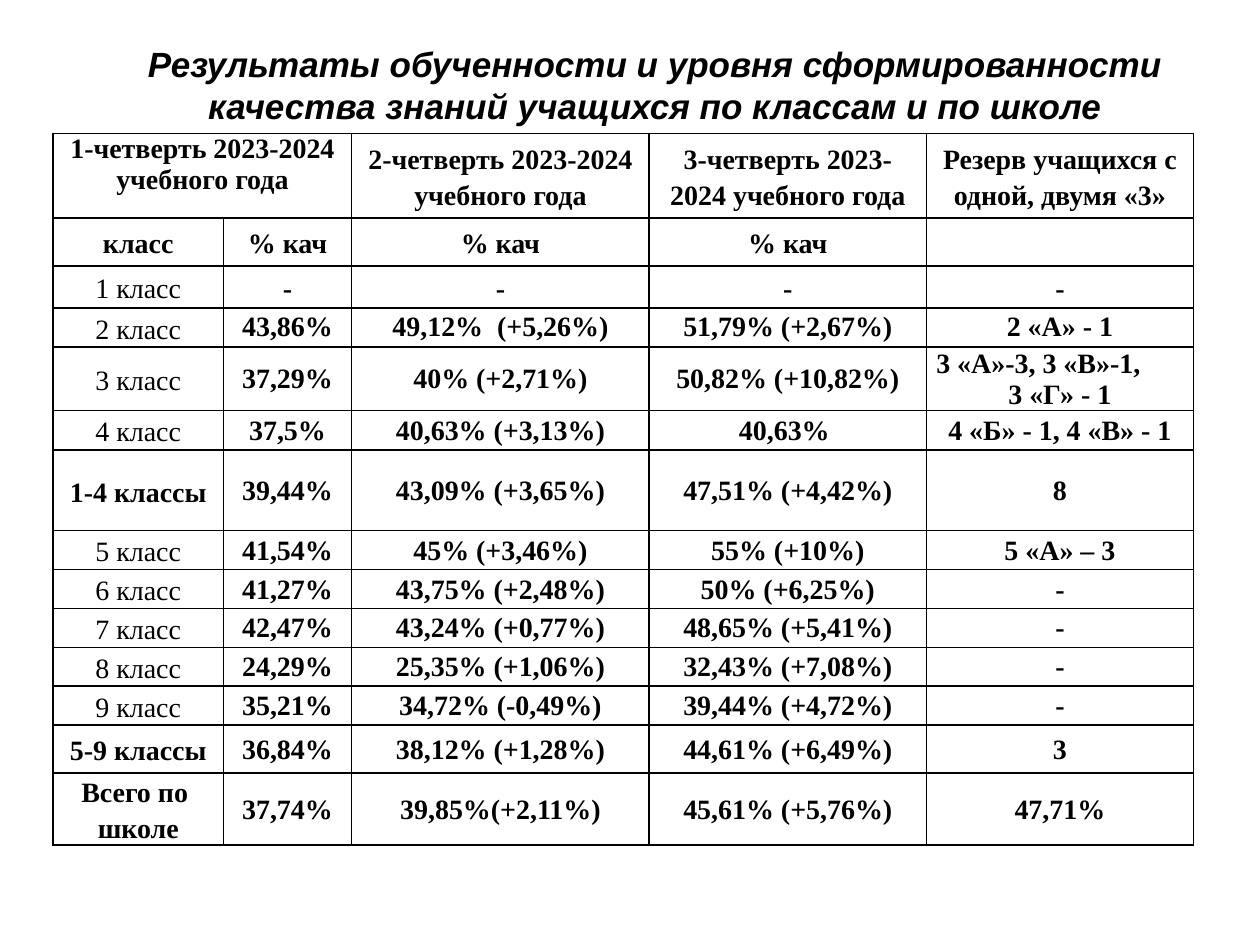
import pptx
import pptx.util
import pptx.dml.color
import pptx.enum.text
import pptx.oxml
import pptx.oxml.ns

Pt = pptx.util.Pt
ALIGN = pptx.enum.text.PP_ALIGN
ANCHOR = pptx.enum.text.MSO_ANCHOR
BLACK = pptx.dml.color.RGBColor(0, 0, 0)

TITLE = ("Результаты обученности и уровня сформированности "
         "качества знаний учащихся по классам и по школе")
HEADINGS = ["1-четверть 2023-2024 учебного года", None,
            "2-четверть 2023-2024 учебного года",
            "3-четверть 2023-2024 учебного года",
            "Резерв учащихся с одной, двумя «3»"]
SUBHEADINGS = ["класс", "% кач", "% кач", "% кач", ""]
RESULTS = [
    ["1 класс", "-", "-", "-", "-"],
    ["2 класс", "43,86%", "49,12%  (+5,26%)", "51,79% (+2,67%)", "2 «А» - 1"],
    ["3 класс", "37,29%", "40% (+2,71%)", "50,82% (+10,82%)",
     "3 «А»-3, 3 «В»-1,\n3 «Г» - 1"],
    ["4 класс", "37,5%", "40,63% (+3,13%)", "40,63% ", "4 «Б» - 1, 4 «В» - 1"],
    ["1-4 классы", "39,44%", "43,09% (+3,65%)", "47,51% (+4,42%)", "8"],
    ["5 класс", "41,54%", "45% (+3,46%)", "55% (+10%)", "5 «А» – 3"],
    ["6 класс", "41,27%", "43,75% (+2,48%)", "50% (+6,25%)", "-"],
    ["7 класс", "42,47%", "43,24% (+0,77%)", "48,65% (+5,41%)", "-"],
    ["8 класс", "24,29%", "25,35% (+1,06%)", "32,43% (+7,08%)", "-"],
    ["9 класс", "35,21%", "34,72% (-0,49%)", "39,44% (+4,72%)", "-"],
    ["5-9 классы", "36,84%", "38,12% (+1,28%)", "44,61% (+6,49%)", "3"],
    ["Всего по \nшколе", "37,74%", "39,85%(+2,11%)", "45,61% (+5,76%)", "47,71%"],
]
COLUMN_WIDTHS = [97.2, 73.4, 170, 158.4, 152.6]
ROW_HEIGHTS = [48, 27.4, 24.2, 22.2, 36, 22.6, 46.2] + [22.2] * 5 + [27.6, 41]


def add_run(paragraph, text, font_name, size, bold=True, italic=False):
    run = paragraph.add_run()
    run.text = text
    run.font.name = font_name
    run.font.size = Pt(size)
    run.font.bold = bold
    run.font.italic = italic
    run.font.color.rgb = BLACK


def add_title(slide, left, top, width, height):
    box = slide.shapes.add_textbox(Pt(left), Pt(top), Pt(width), Pt(height))
    box.text_frame.word_wrap = True
    paragraph = box.text_frame.paragraphs[0]
    paragraph.alignment = ALIGN.CENTER
    add_run(paragraph, TITLE, "Arial", 20, italic=True)


def outline(cell):
    """Draw thin black lines on the four sides; they precede the fill."""
    properties = cell._tc.get_or_add_tcPr()
    for position, side in enumerate(("lnL", "lnR", "lnT", "lnB")):
        line = pptx.oxml.parse_xml(
            f'<a:{side} {pptx.oxml.ns.nsdecls("a")} w="12700"><a:solidFill>'
            f'<a:srgbClr val="{BLACK}"/></a:solidFill></a:{side}>')
        properties.insert(position, line)


def fill_cell(cell, text, margins, anchor, spacing, bold):
    cell.fill.background()
    outline(cell)
    cell.vertical_anchor = anchor
    cell.margin_left = cell.margin_right = Pt(margins[0])
    cell.margin_top, cell.margin_bottom = Pt(margins[1]), Pt(margins[2])
    for index, line in enumerate(text.split("\n")):
        frame = cell.text_frame
        paragraph = frame.add_paragraph() if index else frame.paragraphs[0]
        paragraph.alignment = ALIGN.CENTER
        if spacing:
            paragraph.line_spacing = spacing
        if line:
            add_run(paragraph, line, "Times New Roman", 16, bold)


def add_results_table(slide, left, top, width, height):
    rows = [HEADINGS, SUBHEADINGS] + RESULTS
    frame = slide.shapes.add_table(len(rows), len(HEADINGS),
                                   Pt(left), Pt(top), Pt(width), Pt(height))
    table = frame.table
    table.first_row = table.horz_banding = False
    for column, column_width in zip(table.columns, COLUMN_WIDTHS):
        column.width = Pt(column_width)
    for row, row_height in zip(table.rows, ROW_HEIGHTS):
        row.height = Pt(row_height)
    table.cell(0, 0).merge(table.cell(0, 1))

    for r, row in enumerate(rows):
        for c, text in enumerate(row):
            cell = table.cell(r, c)
            if text is None:
                outline(cell)
                continue
            margins, spacing = (5, 0, 0), 1.15
            anchor = ANCHOR.MIDDLE
            if r == 0:
                anchor = ANCHOR.TOP
                if c == 0:
                    spacing = None
                else:
                    margins = (7.2, 3.6, 3.6)
            elif r > 2 and c > 0:
                spacing = None
                margins = (5, 0, 0) if r == 3 else (0.7, 0.7, 0)
            elif r == len(rows) - 1:
                anchor = ANCHOR.TOP
            # Single classes are set in regular weight, totals in bold
            bold = not (r > 1 and c == 0 and text.endswith(" класс"))
            fill_cell(cell, text, margins, anchor, spacing, bold)

    # First line of the class 3 reserve starts at the left of its cell
    reserve = table.cell(4, 4).text_frame.paragraphs[0]
    reserve.alignment = ALIGN.LEFT
    reserve._p.get_or_add_pPr().set("marL", str(Pt(5)))


def main():
    deck = pptx.Presentation()
    deck.slide_width, deck.slide_height = Pt(720), Pt(540)
    slide = deck.slides.add_slide(deck.slide_layouts[6])
    add_results_table(slide, 30.4, 76.4, sum(COLUMN_WIDTHS), sum(ROW_HEIGHTS))
    add_title(slide, 48.2, 20.9, 652.3, 55.4)
    deck.save("out.pptx")


if __name__ == "__main__":
    main()
